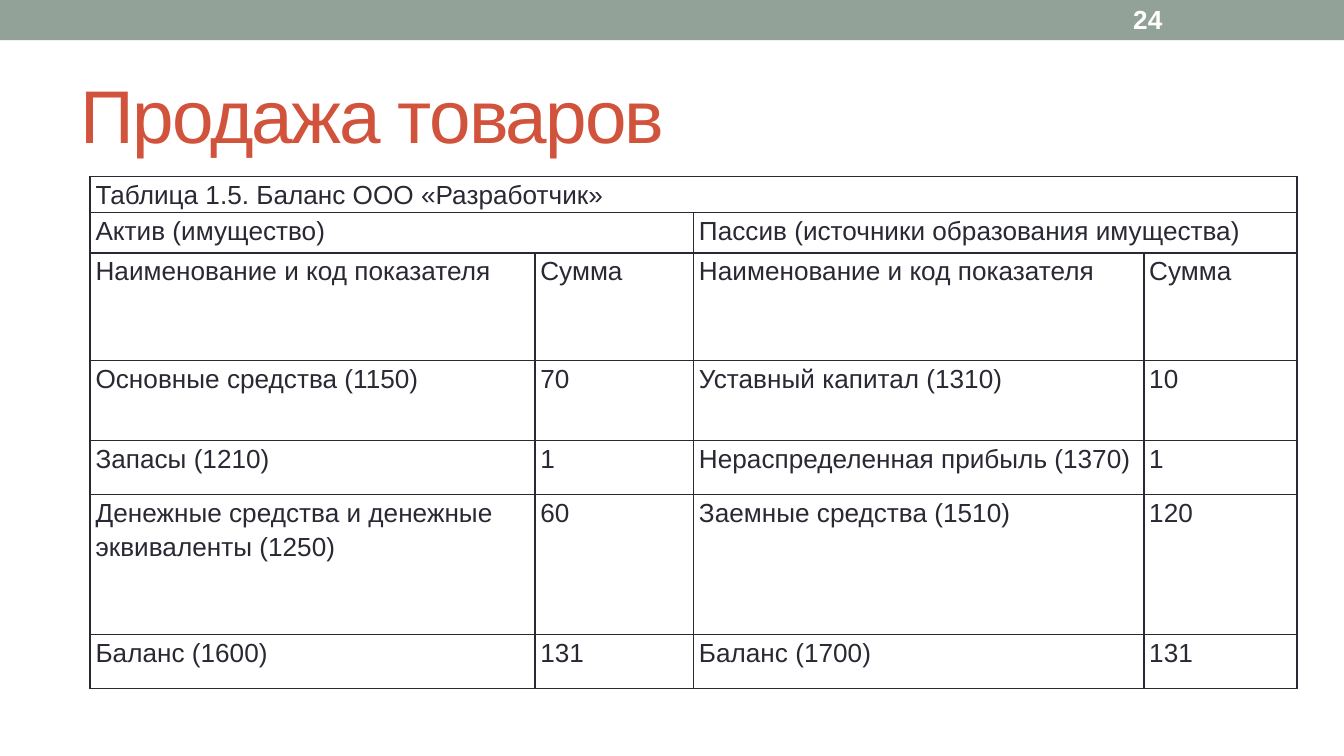
import dataclasses

import lxml.etree
import pptx
import pptx.dml.color
import pptx.enum.shapes
import pptx.enum.text
import pptx.oxml.ns
import pptx.util

Pt = pptx.util.Pt
MIDDLE = pptx.enum.text.MSO_ANCHOR.MIDDLE
LEFT = pptx.enum.text.PP_ALIGN.LEFT


@dataclasses.dataclass(frozen=True)
class Theme:
    font: str = "Arial"
    band: str = "93A299"
    title: str = "D2533C"
    ink: str = "292934"
    white: str = "FFFFFF"
    title_size: int = 40
    text_size: int = 14


theme = Theme()


def add_text(text_frame, text, size, color, bold=False):
    paragraph = text_frame.paragraphs[0]
    paragraph.alignment = LEFT
    run = paragraph.add_run()
    run.text = text
    run.font.name = theme.font
    run.font.size = Pt(size)
    run.font.bold = bold
    run.font.color.rgb = pptx.dml.color.RGBColor.from_string(color)
    return paragraph, run


def add_borders(cell):
    properties = cell._tc.get_or_add_tcPr()
    for position, side in enumerate(("lnL", "lnR", "lnT", "lnB")):
        line = lxml.etree.Element(pptx.oxml.ns.qn(f"a:{side}"), w=str(Pt(1)))
        fill = lxml.etree.SubElement(line, pptx.oxml.ns.qn("a:solidFill"))
        lxml.etree.SubElement(fill, pptx.oxml.ns.qn("a:srgbClr"), val=theme.ink)
        properties.insert(position, line)


presentation = pptx.Presentation()
presentation.slide_width = Pt(720)
presentation.slide_height = Pt(405)
slide = presentation.slides.add_slide(presentation.slide_layouts[5])

band = slide.shapes.add_shape(
    pptx.enum.shapes.MSO_SHAPE.RECTANGLE, Pt(0), Pt(0), Pt(720), Pt(21.6)
)
band.shadow.inherit = False
band.fill.solid()
band.fill.fore_color.rgb = pptx.dml.color.RGBColor.from_string(theme.band)
band.line.fill.background()

title = slide.shapes.title
title.left, title.top, title.width, title.height = Pt(36), Pt(31.7), Pt(648), Pt(58.3)
title.text_frame.vertical_anchor = MIDDLE
paragraph, run = add_text(title.text_frame, "Продажа товаров", theme.title_size, theme.title)
run.font._element.set("spc", "-100")

number = slide.shapes.add_textbox(Pt(600), Pt(0.7), Pt(84), Pt(19.4))
number.text_frame.word_wrap = True
number.text_frame.vertical_anchor = MIDDLE
add_text(number.text_frame, "24", theme.text_size, theme.white, bold=True)

heading = "Наименование и код показателя"
rows = [
    ["Таблица 1.5. Баланс ООО «Разработчик»", "", "", ""],
    ["Актив (имущество)", "", "Пассив (источники образования имущества)", ""],
    [heading, "Сумма", heading, "Сумма"],
    ["Основные средства (1150)", "70", "Уставный капитал (1310)", "10"],
    ["Запасы (1210)", "1", "Нераспределенная прибыль (1370)", "1"],
    ["Денежные средства и денежные эквиваленты (1250)", "60", "Заемные средства (1510)", "120"],
    ["Баланс (1600)", "131", "Баланс (1700)", "131"],
]
column_widths = [238.3, 85, 241.2, 82.1]
row_heights = [17.7, 21.5, 57.8, 42.9, 28.9, 75, 28.9]

table = slide.shapes.add_table(
    len(rows), len(column_widths), Pt(48.3), Pt(94.6), Pt(sum(column_widths)), Pt(sum(row_heights))
).table
table.first_row = False
table.horz_banding = False
for column, width in zip(table.columns, column_widths):
    column.width = Pt(width)
for table_row, height in zip(table.rows, row_heights):
    table_row.height = Pt(height)

table.cell(0, 0).merge(table.cell(0, 3))
table.cell(1, 0).merge(table.cell(1, 1))
table.cell(1, 2).merge(table.cell(1, 3))

for row_index, row in enumerate(rows):
    for column_index, text in enumerate(row):
        cell = table.cell(row_index, column_index)
        cell.fill.background()
        add_borders(cell)
        cell.margin_left = cell.margin_right = Pt(2.9)
        cell.margin_top = cell.margin_bottom = Pt(0)
        if text:
            paragraph, run = add_text(cell.text_frame, text, theme.text_size, theme.ink)
            paragraph.line_spacing = 1.15
            paragraph.space_after = Pt(10)

presentation.save("out.pptx")
